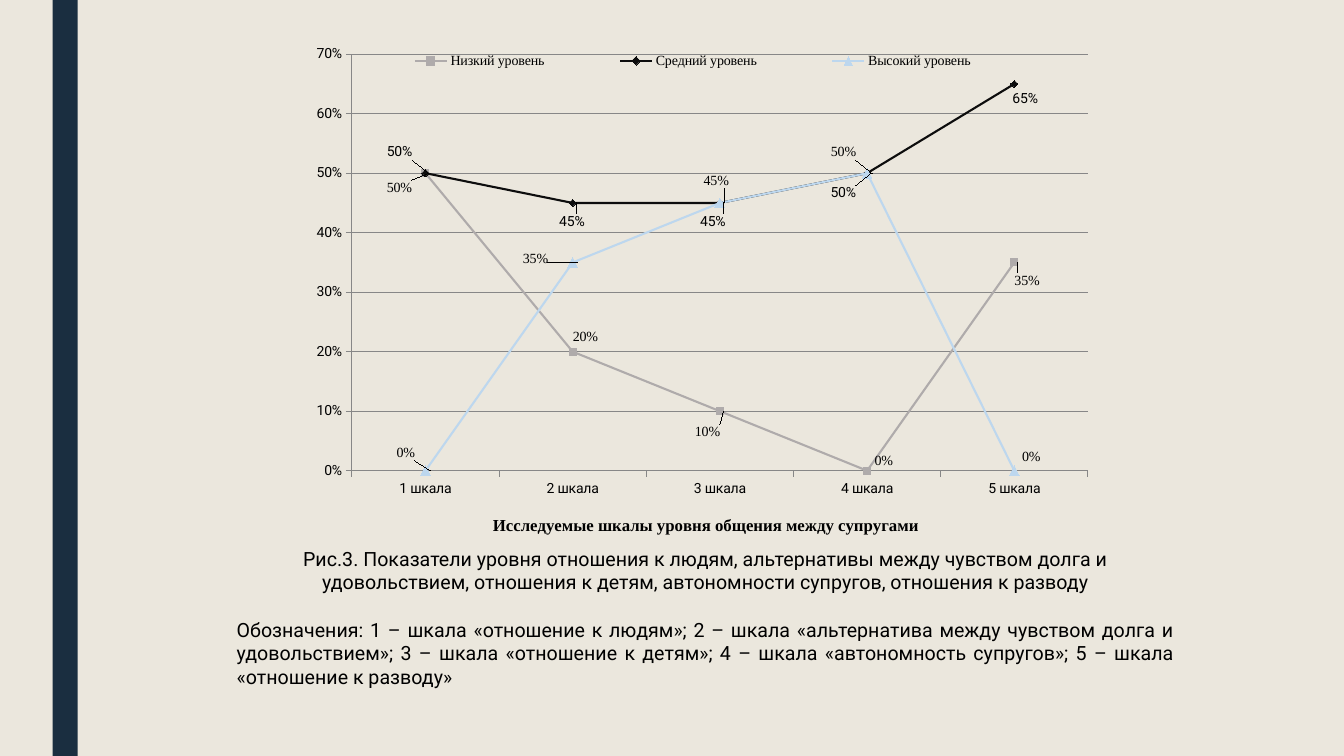
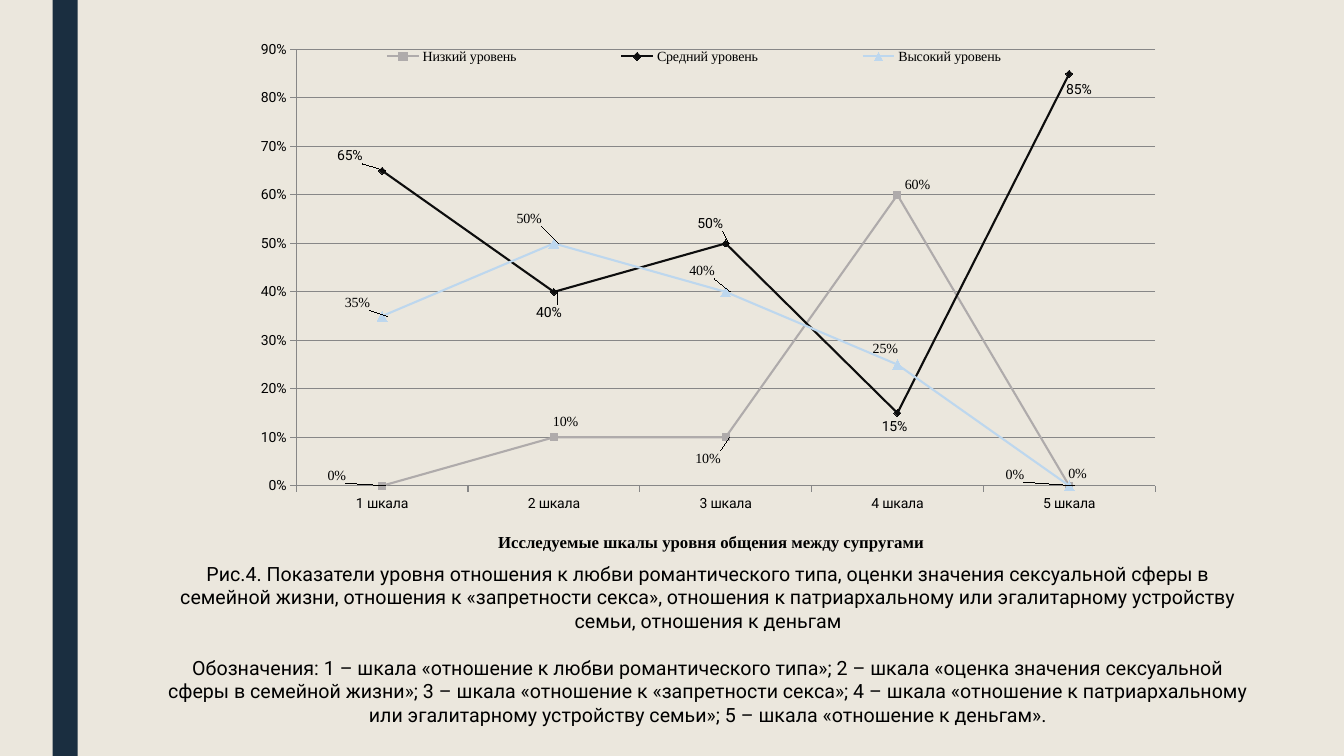
from dataclasses import dataclass

from lxml.etree import SubElement
from pptx import Presentation
from pptx.chart.data import CategoryChartData
from pptx.dml.color import RGBColor
from pptx.enum.chart import (XL_CHART_TYPE, XL_LABEL_POSITION, XL_LEGEND_POSITION,
                             XL_MARKER_STYLE, XL_TICK_MARK)
from pptx.enum.shapes import MSO_SHAPE
from pptx.enum.text import PP_ALIGN
from pptx.oxml.ns import qn
from pptx.util import Emu, Pt

EMU_PER_PX = 9525
SLIDE_WIDTH, SLIDE_HEIGHT = 1280, 720


@dataclass(frozen=True)
class Theme:
    background: str = "EBE7DD"
    band: str = "1A2E40"
    text: str = "000000"
    grid: str = "878787"
    sans: str = "Roboto"
    serif: str = "Times New Roman"
    body_size: int = 14
    axis_title_size: int = 12
    chart_size: int = 10
    paragraph_gap: int = 17
    series_line: float = 1.5


THEME = Theme()


@dataclass(frozen=True)
class Level:
    """Look of one series, the same in every chart."""
    name: str
    line: str
    marker_style: XL_MARKER_STYLE
    marker_size: int
    marker_color: str
    label_font: str


LEVELS = (
    Level("Низкий уровень", "AFABAB", XL_MARKER_STYLE.SQUARE, 5, "AFABAB", THEME.serif),
    Level("Средний уровень", "0D0D0D", XL_MARKER_STYLE.DIAMOND, 5, "000000", THEME.sans),
    Level("Высокий уровень", "BDD7EE", XL_MARKER_STYLE.TRIANGLE, 7, "BDD7EE", THEME.serif),
)
SCALES = [f"{number} шкала" for number in range(1, 6)]
AXIS_TITLE = "Исследуемые шкалы уровня общения между супругами"

# label_shifts: px right and down from the usual place beside each point.
FIGURES = (
    dict(
        chart_box=(281, 41, 773, 485), maximum=0.7, title_at=(0.24, 0.92),
        values=((0.5, 0.2, 0.1, 0, 0.35),
                (0.5, 0.45, 0.45, 0.5, 0.65),
                (0, 0.35, 0.45, 0.5, 0)),
        label_shifts=(((-44, 14), (-7, -14), (-31, 20), (0, -10), (-7, 17)),
                      ((-44, -20), (-20, 18), (-26, 18), (-42, 19), (-9, 14)),
                      ((-36, -17), (-56, -4), (-24, -21), (-43, -20), (-1, -13))),
        text_box=(216, 516, 912, 145), key_alignment=PP_ALIGN.JUSTIFY,
        caption="Рис.3. Показатели уровня отношения к людям, альтернативы между "
                "чувством долга и удовольствием, отношения к детям, автономности "
                "супругов, отношения к разводу",
        key="Обозначения: 1 – шкала «отношение к людям»; 2 – шкала «альтернатива "
            "между чувством долга и удовольствием»; 3 – шкала «отношение к детям»; "
            "4 – шкала «автономность супругов»; 5 – шкала «отношение к разводу»",
    ),
    dict(
        chart_box=(219, 36, 902, 508), maximum=0.9, title_at=(0.28, 0.92),
        values=((0, 0.1, 0.1, 0.6, 0),
                (0.65, 0.4, 0.5, 0.15, 0.85),
                (0.35, 0.5, 0.4, 0.25, 0)),
        label_shifts=(((-59, -10), (-8, -15), (-36, 20), (0, -10), (-8, -12)),
                      ((-50, -14), (-24, 20), (-34, -19), (-22, 13), (-10, 15)),
                      ((-44, -13), (-44, -24), (-43, -20), (-32, -15), (-69, -11))),
        text_box=(144, 530, 1061, 145), key_alignment=PP_ALIGN.CENTER,
        caption="Рис.4. Показатели уровня отношения к любви романтического типа, "
                "оценки значения сексуальной сферы в семейной жизни, отношения к "
                "«запретности секса», отношения к патриархальному или эгалитарному "
                "устройству семьи, отношения к деньгам",
        key="Обозначения: 1 – шкала «отношение к любви романтического типа»; 2 – шкала "
            "«оценка значения сексуальной сферы в семейной жизни»; 3 – шкала "
            "«отношение к «запретности секса»; 4 – шкала «отношение к патриархальному "
            "или эгалитарному устройству семьи»; 5 – шкала «отношение к деньгам».",
    ),
)


def px(*lengths):
    return [Emu(length * EMU_PER_PX) for length in lengths]


def rgb(color):
    return RGBColor.from_string(color)


def format_font(font, name=THEME.sans, size=THEME.chart_size, color=THEME.text, bold=False):
    font.name, font.size, font.bold = name, Pt(size), bold
    font.color.rgb = rgb(color)


def write_text(paragraph, text, alignment=PP_ALIGN.CENTER, space_before=0, **font_format):
    paragraph.alignment = alignment
    paragraph.space_before = Pt(space_before)
    run = paragraph.add_run()
    run.text = text
    format_font(run.font, **font_format)


def set_layout(parent, index, **parts):
    """Give a chart part a manual layout, as its child at the index."""
    for old_layout in parent.findall(qn("c:layout")):
        parent.remove(old_layout)
    layout = parent.makeelement(qn("c:layout"))
    parent.insert(index, layout)
    manual = SubElement(layout, qn("c:manualLayout"))
    for tag, value in parts.items():
        SubElement(manual, qn(f"c:{tag}")).set("val", str(value))


def style_master(presentation, slide):
    """Put the background and the side band on the master."""
    master = presentation.slide_master
    master.background.fill.solid()
    master.background.fill.fore_color.rgb = rgb(THEME.background)
    band = slide.shapes.add_shape(MSO_SHAPE.RECTANGLE, *px(50, 0, 24, SLIDE_HEIGHT))
    band.shadow.inherit = False
    band.fill.solid()
    band.fill.fore_color.rgb = rgb(THEME.band)
    band.line.fill.background()
    band.element.nvSpPr.cNvPr.set("id", "20")
    master.shapes.element.append(band.element)


def style_axes(chart, maximum):
    category_axis, value_axis = chart.category_axis, chart.value_axis
    for axis in (category_axis, value_axis):
        axis.major_tick_mark = XL_TICK_MARK.OUTSIDE
        axis.minor_tick_mark = XL_TICK_MARK.NONE
        format_font(axis.tick_labels.font)
        axis.format.line.color.rgb = rgb(THEME.grid)
        axis.format.line.width = Pt(0.75)
    value_axis.minimum_scale, value_axis.maximum_scale = 0, maximum
    value_axis.major_unit = 0.1
    value_axis.tick_labels.number_format = "0%"
    value_axis.tick_labels.number_format_is_linked = False
    value_axis.has_major_gridlines = True
    value_axis.major_gridlines.format.line.color.rgb = rgb(THEME.grid)
    value_axis.major_gridlines.format.line.width = Pt(0.75)
    write_text(category_axis.axis_title.text_frame.paragraphs[0], AXIS_TITLE,
               name=THEME.serif, size=THEME.axis_title_size, bold=True)


def style_series(series, level):
    series.smooth = False
    series.format.line.color.rgb = rgb(level.line)
    series.format.line.width = Pt(THEME.series_line)
    marker = series.marker
    marker.style, marker.size = level.marker_style, level.marker_size
    marker.format.fill.solid()
    marker.format.fill.fore_color.rgb = rgb(level.marker_color)
    marker.format.line.color.rgb = rgb(level.marker_color)
    labels = series.data_labels
    labels.show_value = True
    labels.number_format, labels.number_format_is_linked = "0%", False
    format_font(labels.font, name=level.label_font)
    for index in range(len(SCALES)):
        label = series.points[index].data_label
        format_font(label.font, name=level.label_font)
        label.position = XL_LABEL_POSITION.RIGHT


def add_level_chart(slide, chart_box, values, label_shifts, maximum, title_at):
    data = CategoryChartData(number_format="0%")
    data.categories = SCALES
    for level, level_values in zip(LEVELS, values):
        data.add_series(level.name, level_values)
    chart = slide.shapes.add_chart(XL_CHART_TYPE.LINE_MARKERS, *px(*chart_box), data).chart
    chart.has_title = False
    format_font(chart.font)
    chart.plots[0].vary_by_categories = False
    chart.has_legend = True
    chart.legend.position = XL_LEGEND_POSITION.TOP
    chart.legend.include_in_layout = False
    format_font(chart.legend.font, name=THEME.serif)
    style_axes(chart, maximum)
    for series, level in zip(chart.plots[0].series, LEVELS):
        style_series(series, level)

    root = chart.element
    edges = dict(xMode="edge", yMode="edge")
    set_layout(root.find(f".//{qn('c:plotArea')}"), 0, layoutTarget="inner", **edges,
               x=0.07, y=0.022, w=0.907, h=0.818)
    set_layout(root.find(f".//{qn('c:legend')}"), 1, **edges, x=0.06, y=0.01, w=0.86, h=0.05)
    set_layout(root.find(f".//{qn('c:catAx')}/{qn('c:title')}"), 1, **edges,
               x=title_at[0], y=title_at[1])
    width, height = chart_box[2:]
    for series_element, shifts in zip(root.iter(qn("c:ser")), label_shifts):
        for label, (right, down) in zip(series_element.iter(qn("c:dLbl")), shifts):
            set_layout(label, 1, x=round(right / width, 4), y=round(down / height, 4))


def add_caption(slide, text_box, caption, key, key_alignment):
    frame = slide.shapes.add_textbox(*px(*text_box)).text_frame
    frame.word_wrap = True
    write_text(frame.paragraphs[0], caption, size=THEME.body_size)
    write_text(frame.add_paragraph(), key, size=THEME.body_size, alignment=key_alignment,
               space_before=THEME.paragraph_gap)


def main():
    presentation = Presentation()
    presentation.slide_width, presentation.slide_height = px(SLIDE_WIDTH, SLIDE_HEIGHT)
    blank = presentation.slide_layouts[6]
    slides = [presentation.slides.add_slide(blank) for _ in FIGURES]
    style_master(presentation, slides[0])
    for slide, figure in zip(slides, FIGURES):
        add_level_chart(slide, *(figure[part] for part in (
            "chart_box", "values", "label_shifts", "maximum", "title_at")))
        add_caption(slide, *(figure[part] for part in (
            "text_box", "caption", "key", "key_alignment")))
    presentation.save("out.pptx")


if __name__ == "__main__":
    main()
